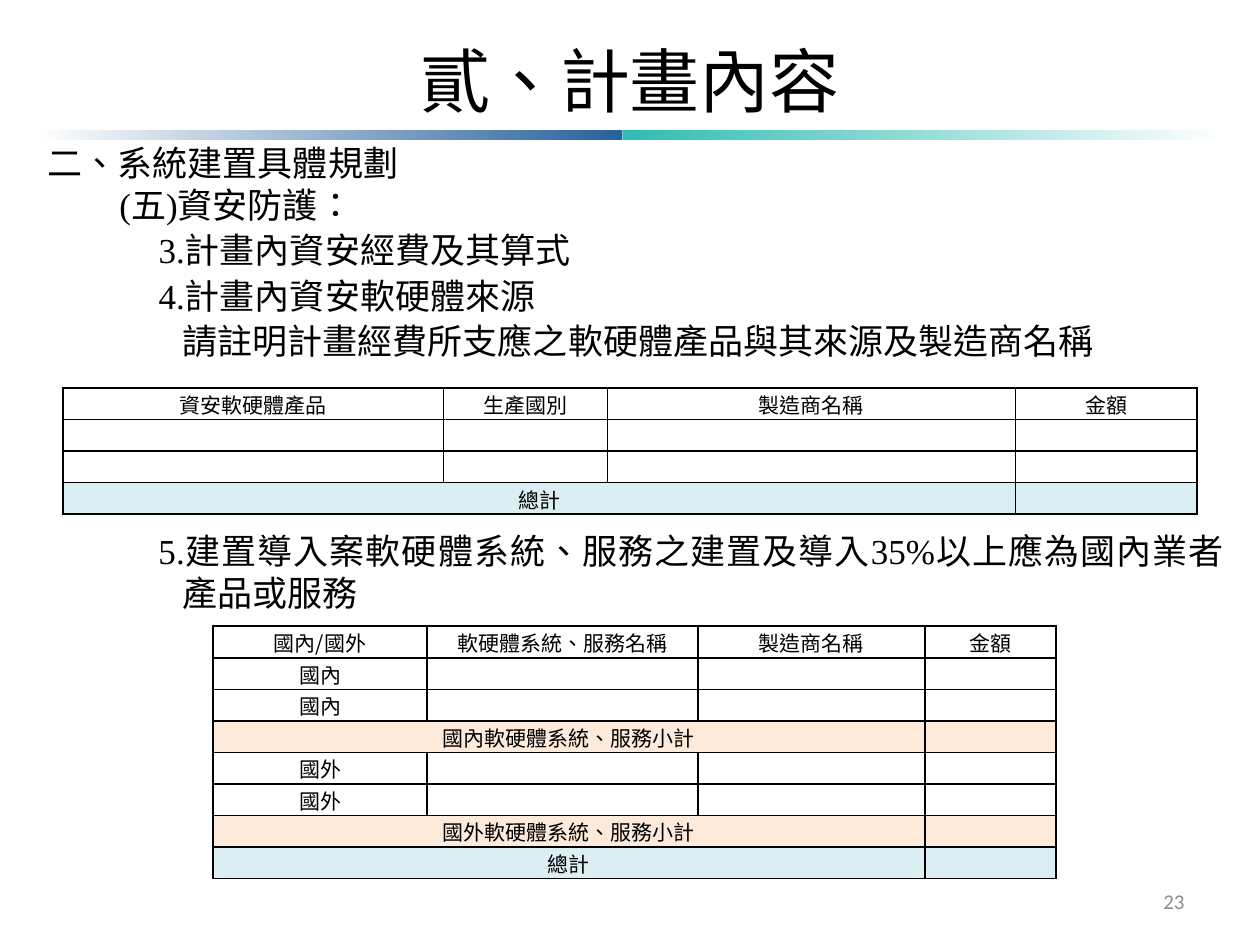
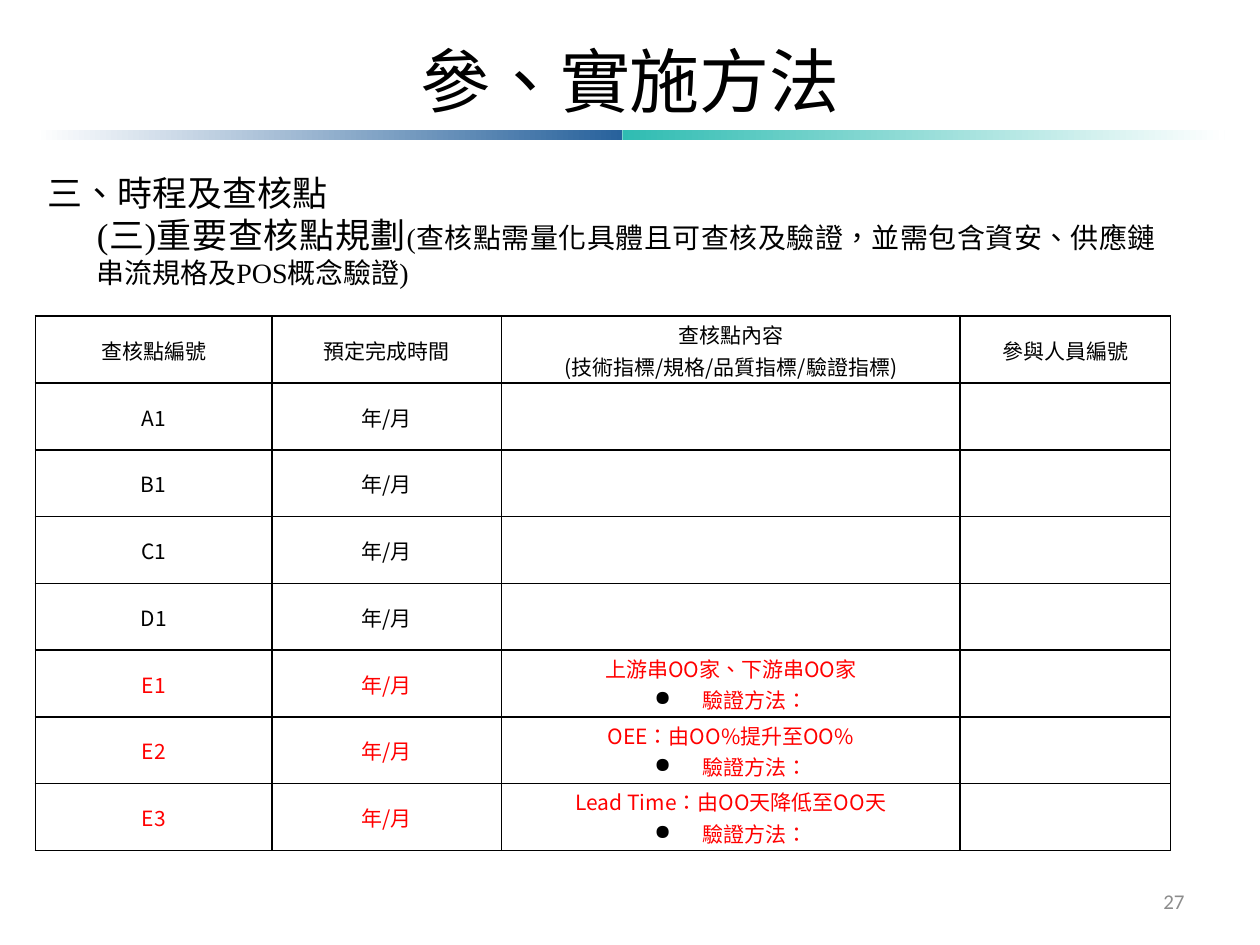
from lxml.etree import SubElement
from pptx import Presentation
from pptx.dml.color import RGBColor as RGB
from pptx.enum.lang import MSO_LANGUAGE_ID as LANG
from pptx.enum.shapes import MSO_SHAPE as SHAPE
from pptx.enum.text import MSO_ANCHOR as ANCHOR, PP_ALIGN as ALIGN
from pptx.oxml import parse_xml
from pptx.oxml.ns import nsdecls, qn
from pptx.util import Inches, Pt

COLORS = {
    "text": "000000", "alert": "FF0000", "number": "8C8C8C", "white": "FFFFFF",
    "navy": "28629C", "teal": "2FBCB2", "total": "DBEEF4", "subtotal": "FDEADA",
}
SERIF, SANS, PLAIN = "Times New Roman", "Noto Sans CJK SC", "Calibri"


def write(frame, lines, size, face, color="text"):
    for i, (runs, layout) in enumerate(lines):
        paragraph = frame.paragraphs[0] if i == 0 else frame.add_paragraph()
        layout = dict(layout)
        props = paragraph._p.get_or_add_pPr()
        for key in ("marL", "indent"):
            props.set(key, str(Inches(layout.pop(key, 0))))
        bullet = layout.pop("bullet", None)
        if bullet:
            bullet_color = SubElement(props, qn("a:buClr"))
            SubElement(bullet_color, qn("a:srgbClr"), val=COLORS["text"])
            SubElement(props, qn("a:buChar"), char=bullet)
        for key, value in layout.items():
            setattr(paragraph, key, value)
        if not runs:
            SubElement(paragraph._p, qn("a:endParaRPr"), sz=str(size * 100))
            continue
        for text, points in [(runs, size)] if isinstance(runs, str) else runs:
            run = paragraph.add_run()
            run.text = text
            font_format = {"size": Pt(points), "name": face,
                           "language_id": LANG.TRADITIONAL_CHINESE}
            for key, value in font_format.items():
                setattr(run.font, key, value)
            run.font.color.rgb = RGB.from_string(COLORS[color])
            SubElement(run._r.get_or_add_rPr(), qn("a:ea"), typeface=SANS)


def add_grid(slide, left, top, widths, row_height, rows, face, inset, fills={}, alerts=()):
    grid = slide.shapes.add_table(
        len(rows), len(widths), Inches(left), Inches(top),
        Inches(sum(widths)), Inches(row_height * len(rows))).table
    grid.first_row = grid.horz_banding = False
    for column, width in zip(grid.columns, widths):
        column.width = Inches(width)
    for r, row in enumerate(rows):
        grid.rows[r].height = Inches(row_height)
        for c in range(len(widths)):
            cell = grid.cell(r, c)
            cell_format = {"margin_left": Inches(inset), "margin_right": Inches(inset),
                           "margin_top": 0, "margin_bottom": 0,
                           "vertical_anchor": ANCHOR.MIDDLE}
            for key, value in cell_format.items():
                setattr(cell, key, value)
            if r in fills:
                cell.fill.solid()
                cell.fill.fore_color.rgb = RGB.from_string(COLORS[fills[r]])
            else:
                cell.fill.background()
            for side, edge in enumerate(("lnL", "lnR", "lnT", "lnB")):
                cell._tc.get_or_add_tcPr().insert(side, parse_xml(
                    f'<a:{edge} {nsdecls("a")} w="{Pt(1)}"><a:solidFill>'
                    f'<a:srgbClr val="{COLORS["text"]}"/></a:solidFill></a:{edge}>'))
            lines = []
            for text in (row[c] if c < len(row) else "").split("\n"):
                layout = {"alignment": ALIGN.CENTER, "line_spacing": Pt(18)}
                if text.startswith("驗證方法"):
                    layout |= {"marL": 0.38, "indent": -0.38, "bullet": "●"}
                lines.append((text, layout))
            write(cell.text_frame, lines, 12, face, "alert" if r in alerts else "text")
        if r in fills:
            grid.cell(r, 0).merge(grid.cell(r, 2))


deck = Presentation()
deck.slide_width, deck.slide_height = Inches(10), Inches(7.5)

JUSTIFY = {"alignment": ALIGN.JUSTIFY}
ITEM = JUSTIFY | {"marL": 0.39, "indent": 0.49, "line_spacing": Pt(26)}
security_outline = [
    ("二、系統建置具體規劃", JUSTIFY),
    ("(五)資安防護：", {"marL": 0.57}),
    ("3.計畫內資安經費及其算式", ITEM),
    ("4.計畫內資安軟硬體來源", ITEM),
    ("請註明計畫經費所支應之軟硬體產品與其來源及製造商名稱", ITEM | {"indent": 0.68}),
    ("5.建置導入案軟硬體系統、服務之建置及導入35%以上應為國內業者產品或服務",
     JUSTIFY | {"marL": 1.07, "indent": -0.19, "space_before": Pt(96)}),
]
checkpoint_outline = [
    ("三、時程及查核點", JUSTIFY),
    ([("(三)重要查核點規劃", 20),
      ("(查核點需量化具體且可查核及驗證，並需包含資安、供應鏈串流規格及POS概念驗證)", 16)],
     JUSTIFY | {"marL": 0.39}),
]
pages = [
    ("貳、計畫內容", "23", security_outline, (0.28, 1.07, 9.53, 3.89)),
    ("參、實施方法", "27", checkpoint_outline, (0.28, 1.31, 9, 1.04)),
]
bands = [(0.28, 4.66, ("white", "navy")), (4.94, 4.78, ("teal", "white"))]

for title, number, outline, outline_place in pages:
    slide = deck.slides.add_slide(deck.slide_layouts[6])
    for left, width, ends in bands:
        band = slide.shapes.add_shape(
            SHAPE.RECTANGLE, Inches(left), Inches(1.03), Inches(width), Inches(0.08))
        band.shadow.inherit = False
        band.line.fill.background()
        band.fill.gradient()
        band.fill.gradient_angle = 0
        for stop, end in zip(band.fill.gradient_stops, ends):
            stop.color.rgb = RGB.from_string(COLORS[end])
    texts = [
        ((0.5, 0.13, 9, 1.01), [(title, {"alignment": ALIGN.CENTER})],
         40, SERIF, "text", ANCHOR.MIDDLE),
        (outline_place, outline, 20, SERIF, "text", ANCHOR.TOP),
        ((7.17, 6.95, 2.33, 0.4), [(number, {"alignment": ALIGN.RIGHT})],
         12, PLAIN, "number", ANCHOR.MIDDLE),
    ]
    for place, lines, size, face, color, anchor in texts:
        frame = slide.shapes.add_textbox(*map(Inches, place)).text_frame
        frame.word_wrap = True
        frame.vertical_anchor = anchor
        write(frame, lines, size, face, color)

security_slide, checkpoint_slide = deck.slides

add_grid(security_slide, 0.5, 3.08, (3.02, 1.3, 3.24, 1.44), 0.25,
         [("資安軟硬體產品", "生產國別", "製造商名稱", "金額"), (), (), ("總計",)],
         SERIF, 0.07, {3: "total"})

add_grid(security_slide, 1.69, 4.97, (1.7, 2.15, 1.8, 1.04), 0.25,
         [("國內/國外", "軟硬體系統、服務名稱", "製造商名稱", "金額"),
          ("國內",), ("國內",), ("國內軟硬體系統、服務小計",),
          ("國外",), ("國外",), ("國外軟硬體系統、服務小計",), ("總計",)],
         SANS, 0.07, {3: "subtotal", 6: "subtotal", 7: "total"})

goals = {"A1": "", "B1": "", "C1": "", "D1": "",
         "E1": "上游串OO家、下游串OO家\n驗證方法：",
         "E2": "OEE：由OO%提升至OO%\n驗證方法：",
         "E3": "Lead Time：由OO天降低至OO天\n驗證方法："}
add_grid(checkpoint_slide, 0.28, 2.51, (1.88, 1.82, 3.64, 1.67), 0.53,
         [("查核點編號", "預定完成時間",
           "查核點內容\n(技術指標/規格/品質指標/驗證指標)", "參與人員編號"),
          *((code, "年/月", goal) for code, goal in goals.items())],
         SANS, 0.04, alerts=(5, 6, 7))

deck.save("out.pptx")
